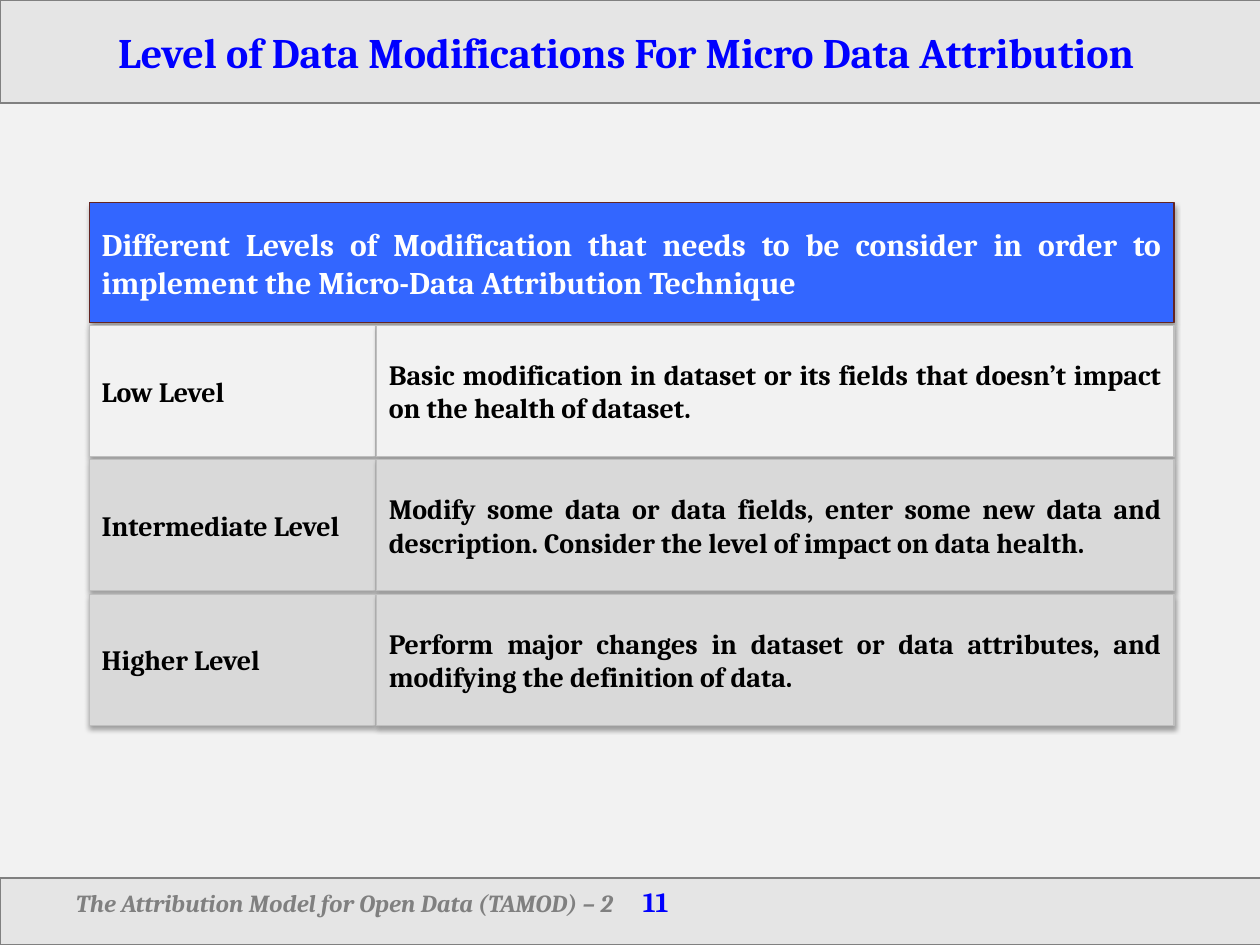
from dataclasses import dataclass

import lxml.etree
import pptx
import pptx.dml.color
import pptx.enum.shapes
import pptx.enum.text
import pptx.oxml.ns
import pptx.util

Cm = pptx.util.Cm
Pt = pptx.util.Pt
ALIGN = pptx.enum.text.PP_ALIGN
ANCHOR = pptx.enum.text.MSO_ANCHOR
qn = pptx.oxml.ns.qn


@dataclass(frozen=True)
class Theme:
    font: str = "Cambria"
    background: str = "F2F2F2"
    bar: str = "D9D9D9"
    bar_line: str = "808080"
    accent: str = "0000FF"
    muted: str = "808080"
    header: str = "3366FF"
    header_line: str = "632523"
    header_text: str = "FFFFFF"
    cell_line: str = "BFBFBF"
    cell_text: str = "000000"
    title_size: float = 24
    header_size: float = 18
    cell_size: float = 16
    footer_size: float = 14
    number_size: float = 16


@dataclass(frozen=True)
class Area:
    """A rectangle in centimetres."""
    left: float
    top: float
    width: float
    height: float


@dataclass(frozen=True)
class Level:
    name: str
    description: str
    fill: str


THEME = Theme()
BAR_WIDTH = 25.43
TABLE_LEFT, TABLE_WIDTH = 1.8, 21.87
NAME_WIDTH, COLUMN_GAP = 5.77, 0.02
ROW_TOP, ROW_HEIGHT, ROW_PITCH = 6.56, 2.64, 2.71

LEVELS = [
    Level("Low Level",
          "Basic modification in dataset or its fields that doesn’t impact "
          "on the health of dataset.", "F2F2F2"),
    Level("Intermediate Level",
          "Modify some data or data fields, enter some new data and description. "
          "Consider the level of impact on data health.", "D9D9D9"),
    Level("Higher Level",
          "Perform major changes in dataset or data attributes, and modifying "
          "the definition of data.", "D9D9D9"),
]


def rgb(value: str) -> pptx.dml.color.RGBColor:
    return pptx.dml.color.RGBColor.from_string(value)


def paint(shape, fill: str, line: str) -> None:
    shape.fill.solid()
    shape.fill.fore_color.rgb = rgb(fill)
    shape.line.color.rgb = rgb(line)
    shape.line.width = Pt(0.75)


def style(span, size: float, color: str, italic: bool = False) -> None:
    span.font.name = THEME.font
    span.font.size = Pt(size)
    span.font.bold = True
    span.font.italic = italic
    span.font.color.rgb = rgb(color)


def set_opacity(color_element, percent: int) -> None:
    alpha = lxml.etree.SubElement(color_element, qn("a:alpha"))
    alpha.set("val", str(percent * 1000))


def add_soft_shadow(shape) -> None:
    shape.shadow.inherit = False
    effects = shape._element.spPr.find(qn("a:effectLst"))
    shadow = lxml.etree.SubElement(
        effects, qn("a:outerShdw"), blurRad=str(Pt(3.1)), dist=str(Pt(1.8)),
        dir="5400000", rotWithShape="0")
    color = lxml.etree.SubElement(shadow, qn("a:srgbClr"), val="000000")
    set_opacity(color, 35)


def format_bar(bar, area: Area, anchor) -> None:
    """Turn a placeholder into a half-transparent band."""
    bar.left, bar.top = Cm(area.left), Cm(area.top)
    bar.width, bar.height = Cm(area.width), Cm(area.height)
    paint(bar, THEME.bar, THEME.bar_line)
    set_opacity(bar._element.spPr.find(qn("a:solidFill"))[0], 50)
    bar.text_frame.auto_size = pptx.enum.text.MSO_AUTO_SIZE.NONE
    bar.text_frame.vertical_anchor = anchor


def fill_title(title) -> None:
    format_bar(title, Area(0, 0, BAR_WIDTH, 2.08), ANCHOR.MIDDLE)
    title.text_frame.text = "Level of Data Modifications For Micro Data Attribution "
    para = title.text_frame.paragraphs[0]
    para.alignment = ALIGN.CENTER
    style(para.runs[0], THEME.title_size, THEME.accent)


def fill_footer(footer) -> None:
    """Place the footer text at the left and the page number at a right tab."""
    format_bar(footer, Area(0, 17.7, BAR_WIDTH, 1.35), ANCHOR.TOP)
    footer.text_frame.margin_left = Cm(1.53)
    para = footer.text_frame.paragraphs[0]
    para.alignment = ALIGN.LEFT
    para.space_before = Pt(3)
    tabs = lxml.etree.SubElement(para._p.get_or_add_pPr(), qn("a:tabLst"))
    lxml.etree.SubElement(tabs, qn("a:tab"), pos=str(Cm(23.37)), algn="r")
    label, number = para.add_run(), para.add_run()
    label.text = "The Attribution Model for Open Data (TAMOD) – 2\t"
    number.text = "11"
    style(label, THEME.footer_size, THEME.muted, italic=True)
    style(number, THEME.number_size, THEME.accent)


def add_box(slide, area: Area, text: str, fill: str, line: str = THEME.cell_line,
            size: float = THEME.cell_size, color: str = THEME.cell_text,
            alignment=ALIGN.JUSTIFY) -> None:
    box = slide.shapes.add_shape(
        pptx.enum.shapes.MSO_SHAPE.RECTANGLE,
        Cm(area.left), Cm(area.top), Cm(area.width), Cm(area.height))
    paint(box, fill, line)
    add_soft_shadow(box)
    box.text_frame.word_wrap = True
    box.text_frame.vertical_anchor = ANCHOR.MIDDLE
    box.text_frame.text = text
    para = box.text_frame.paragraphs[0]
    para.alignment = alignment
    style(para.runs[0], size, color)


def add_levels(slide) -> None:
    description_left = TABLE_LEFT + NAME_WIDTH + COLUMN_GAP
    description_width = TABLE_WIDTH - NAME_WIDTH - COLUMN_GAP
    for row, level in enumerate(LEVELS):
        top = ROW_TOP + row * ROW_PITCH
        add_box(slide, Area(TABLE_LEFT, top, NAME_WIDTH, ROW_HEIGHT),
                level.name, level.fill, alignment=ALIGN.LEFT)
        add_box(slide, Area(description_left, top, description_width, ROW_HEIGHT),
                level.description, level.fill)


def main() -> None:
    deck = pptx.Presentation()
    deck.slide_width, deck.slide_height = Cm(25.4), Cm(19.05)
    slide = deck.slides.add_slide(deck.slide_layouts[0])
    slide.background.fill.solid()
    slide.background.fill.fore_color.rgb = rgb(THEME.background)
    fill_title(slide.shapes.title)
    fill_footer(slide.placeholders[1])
    add_box(slide, Area(TABLE_LEFT, 4.09, TABLE_WIDTH, 2.41),
            "Different Levels of Modification that needs to be consider in order "
            "to implement the Micro-Data Attribution Technique",
            THEME.header, THEME.header_line, THEME.header_size, THEME.header_text)
    add_levels(slide)
    deck.save("out.pptx")


if __name__ == "__main__":
    main()
